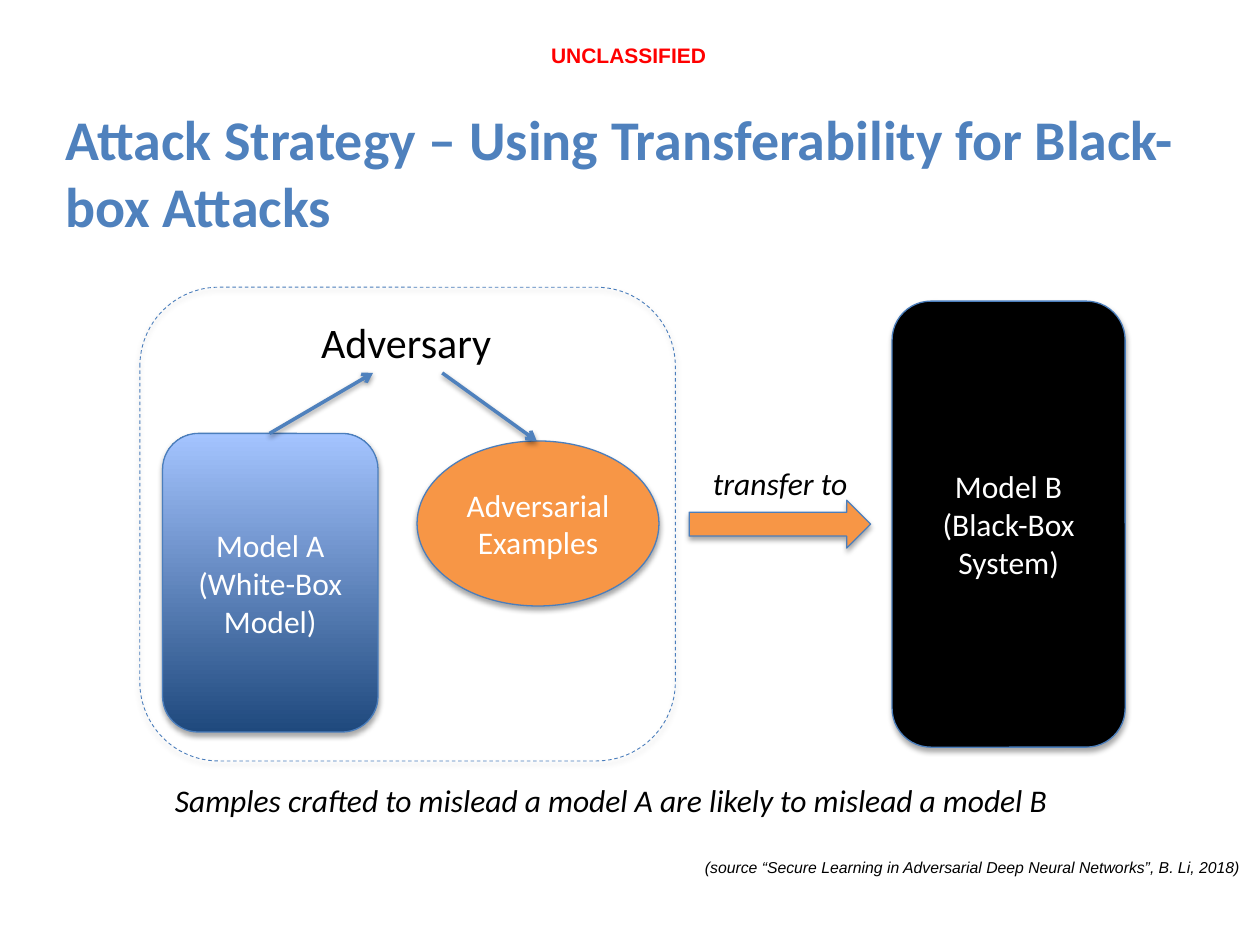
from dataclasses import dataclass
from typing import NamedTuple, Optional

from lxml.etree import SubElement
from pptx import Presentation
from pptx.dml.color import RGBColor
from pptx.enum.dml import MSO_LINE
from pptx.enum.shapes import MSO_CONNECTOR, MSO_SHAPE
from pptx.enum.text import MSO_ANCHOR, PP_ALIGN
from pptx.oxml.ns import qn
from pptx.util import Emu, Inches, Pt


@dataclass(frozen=True)
class Theme:
    accent: str = "4F81BD"
    outline: str = "4B7EBC"
    orange: str = "F79646"
    navy: str = "1F497D"
    sky: str = "A4C4FF"
    black: str = "000000"
    white: str = "FFFFFF"
    red: str = "FF0000"
    body_font: str = "Calibri"
    note_font: str = "Arial"
    title_size: int = 32
    heading_size: int = 24
    body_size: int = 18
    marking_size: int = 12
    source_size: int = 9


class Box(NamedTuple):
    """Left, top, width and height in grid cells."""
    x: float
    y: float
    w: float
    h: float


@dataclass(frozen=True)
class Label:
    text: str
    box: Box
    size: int
    color: str = "000000"
    font: str = "Calibri"
    bold: bool = False
    italic: bool = False
    center: bool = False
    wrap: bool = False


@dataclass(frozen=True)
class Node:
    kind: MSO_SHAPE
    box: Box
    fill: tuple[str, ...] = ()  # none, one solid colour, or bottom and top of a gradient
    lines: tuple[str, ...] = ()
    line_width: float = 0.75
    dash: Optional[MSO_LINE] = None


class Arrow(NamedTuple):
    x1: float
    y1: float
    x2: float
    y2: float


T = Theme()
COLS, ROWS = 100, 75
SLIDE_W, SLIDE_H = Inches(10), Inches(7.5)

LABELS = [
    Label("UNCLASSIFIED", Box(39.1, 2.9, 21.6, 3), T.marking_size, T.red,
          T.note_font, bold=True, center=True, wrap=True),
    Label("Attack Strategy – Using Transferability for Black-box Attacks",
          Box(4.2, 7.8, 94.4, 8), T.title_size, T.accent, bold=True, wrap=True),
    Label("(source “Secure Learning in Adversarial Deep Neural Networks”, B. Li, 2018)",
          Box(54.7, 67.6, 44.9, 2.5), T.source_size, font=T.note_font,
          italic=True, center=True),
    Label("Adversary", Box(24.5, 24.6, 15.7, 5), T.heading_size),
    Label("Samples crafted to mislead a model A are likely to mislead a model B",
          Box(12.9, 61.5, 72.4, 4), T.body_size, italic=True),
    Label("transfer to", Box(55.6, 36.3, 12.8, 4), T.body_size, italic=True),
]

NODES = [
    Node(MSO_SHAPE.RIGHT_ARROW, Box(54.7, 39.7, 14.4, 3.8), (T.orange,)),
    Node(MSO_SHAPE.ROUNDED_RECTANGLE, Box(70.8, 23.9, 18.5, 35.4), (T.black,),
         ("Model B", "(Black-Box System)")),
    Node(MSO_SHAPE.ROUNDED_RECTANGLE, Box(11.1, 22.8, 42.5, 37.6),
         line_width=0.5, dash=MSO_LINE.DASH),
    Node(MSO_SHAPE.ROUNDED_RECTANGLE, Box(12.9, 34.4, 17.1, 23.7), (T.navy, T.sky),
         ("Model A", "(White-Box Model)")),
    Node(MSO_SHAPE.OVAL, Box(33.1, 35, 19.2, 13.1), (T.orange,),
         ("Adversarial Examples",)),
]

ARROWS = [Arrow(21.4, 34.4, 29.6, 29.6), Arrow(35.1, 29.6, 42.6, 35)]


def col(n: float) -> Emu:
    return Emu(round(SLIDE_W * n / COLS))


def row(n: float) -> Emu:
    return Emu(round(SLIDE_H * n / ROWS))


def place(box: Box) -> tuple[Emu, Emu, Emu, Emu]:
    return col(box.x), row(box.y), col(box.w), row(box.h)


def rgb(color: str) -> RGBColor:
    return RGBColor.from_string(color)


def add_run(p, text: str, size: int, color: str, font: str = T.body_font,
            bold: bool = False, italic: bool = False) -> None:
    r = p.add_run()
    r.text = text
    f = r.font
    f.name, f.size, f.bold, f.italic = font, Pt(size), bold, italic
    f.color.rgb = rgb(color)


def add_shadow(sp, opacity: int, distance: float) -> None:
    """Give the shape a soft shadow straight below it."""
    effects = SubElement(sp._element.spPr, qn("a:effectLst"))
    shadow = SubElement(effects, qn("a:outerShdw"), blurRad=str(Pt(3.1)),
                        dist=str(Pt(distance)), dir="5400000", rotWithShape="0")
    color = SubElement(shadow, qn("a:srgbClr"), val=T.black)
    SubElement(color, qn("a:alpha"), val=str(opacity * 1000))


def add_label(s, label: Label) -> None:
    tf = s.shapes.add_textbox(*place(label.box)).text_frame
    tf.word_wrap = label.wrap
    p = tf.paragraphs[0]
    p.alignment = PP_ALIGN.CENTER if label.center else PP_ALIGN.LEFT
    add_run(p, label.text, label.size, label.color, label.font, label.bold, label.italic)


def add_node(s, node: Node) -> None:
    sp = s.shapes.add_shape(node.kind, *place(node.box))
    if len(node.fill) == 2:
        sp.fill.gradient()
        sp.fill.gradient_angle = 90
        for stop, position, color in zip(sp.fill.gradient_stops, (0, 1), node.fill):
            stop.position = position
            stop.color.rgb = rgb(color)
    elif node.fill:
        sp.fill.solid()
        sp.fill.fore_color.rgb = rgb(node.fill[0])
    else:
        sp.fill.background()
    sp.line.color.rgb = rgb(T.outline)
    sp.line.width = Pt(node.line_width)
    if node.dash:
        sp.line.dash_style = node.dash
    add_shadow(sp, 35, 1.8)
    tf = sp.text_frame
    tf.word_wrap = True
    tf.vertical_anchor = MSO_ANCHOR.MIDDLE
    for i, text in enumerate(node.lines):
        p = tf.add_paragraph() if i else tf.paragraphs[0]
        p.alignment = PP_ALIGN.CENTER
        add_run(p, text, T.body_size, T.white)


def add_arrow(s, arrow: Arrow) -> None:
    line = s.shapes.add_connector(MSO_CONNECTOR.STRAIGHT, col(arrow.x1), row(arrow.y1),
                                  col(arrow.x2), row(arrow.y2))
    line.line.color.rgb = rgb(T.accent)
    line.line.width = Pt(2)
    SubElement(line.line._get_or_add_ln(), qn("a:tailEnd"), type="arrow")
    add_shadow(line, 38, 1.6)


def main() -> None:
    prs = Presentation()
    prs.slide_width, prs.slide_height = SLIDE_W, SLIDE_H
    s = prs.slides.add_slide(prs.slide_layouts[6])
    for label in LABELS:
        add_label(s, label)
    for node in NODES:
        add_node(s, node)
    for arrow in ARROWS:
        add_arrow(s, arrow)
    prs.save("out.pptx")


if __name__ == "__main__":
    main()
